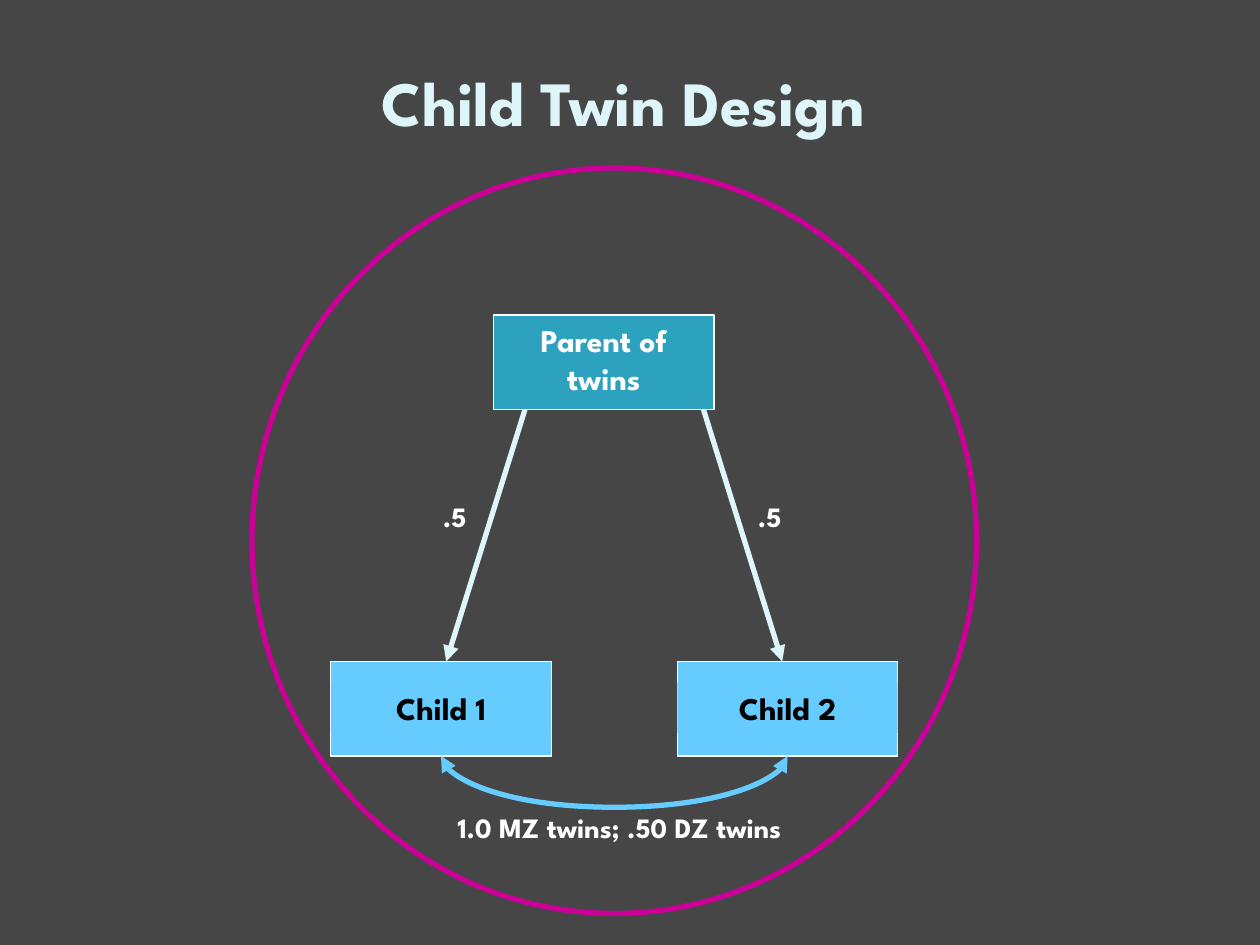
from pptx import Presentation
from pptx.dml.color import RGBColor
from pptx.enum.shapes import MSO_CONNECTOR as Link, MSO_SHAPE as Form
from pptx.enum.text import MSO_ANCHOR as Anchor, MSO_AUTO_SIZE as Fit, PP_ALIGN as Align
from pptx.oxml.ns import qn
from pptx.util import Emu, Inches, Pt
from lxml.etree import SubElement

CHARCOAL = RGBColor(0x46, 0x46, 0x46)
ICE = RGBColor(0xDE, 0xF5, 0xFA)
TEAL = RGBColor(0x2D, 0xA2, 0xBF)
SKY = RGBColor(0x66, 0xCC, 0xFF)
MAGENTA = RGBColor(0xCC, 0x00, 0x99)
WHITE = RGBColor(0xFF, 0xFF, 0xFF)
BLACK = RGBColor(0x00, 0x00, 0x00)


class Diagram:
    """Draws on one slide; lengths are cells of a 120 by 90 grid."""

    font_name = "League Spartan"
    thick, thin = Pt(3), Pt(0.75)

    def __init__(self, slide, background):
        self.slide = slide
        slide.background.fill.solid()
        slide.background.fill.fore_color.rgb = background

    @staticmethod
    def cells(*counts):
        return [Inches(count / 12) for count in counts]

    def outline(self, form, place, color, width, fill=None):
        shape = self.slide.shapes.add_shape(form, *self.cells(*place))
        shape.shadow.inherit = False
        if fill is None:
            shape.fill.background()
        else:
            shape.fill.solid()
            shape.fill.fore_color.rgb = fill
        shape.line.color.rgb = color
        shape.line.width = width
        return shape

    def box(self, place, fill):
        return self.outline(Form.RECTANGLE, place, WHITE, self.thin, fill)

    def text(self, words, place, size, color=WHITE, align=Align.CENTER,
             anchor=Anchor.TOP, fit=Fit.SHAPE_TO_FIT_TEXT, spacing=None, fill=None):
        label = self.slide.shapes.add_textbox(*self.cells(*place))
        if fill is not None:
            label.fill.solid()
            label.fill.fore_color.rgb = fill
        frame = label.text_frame
        frame.word_wrap = True
        frame.auto_size = fit
        frame.vertical_anchor = anchor
        paragraph = frame.paragraphs[0]
        paragraph.text = words
        paragraph.alignment = align
        paragraph.line_spacing = spacing
        font = paragraph.font
        font.name, font.size, font.bold = self.font_name, Pt(size), True
        font.color.rgb = color

    def arrow(self, start, end, color, ends=("tailEnd",), kind=Link.STRAIGHT):
        arrow = self.slide.shapes.add_connector(kind, *self.cells(*start, *end))
        arrow.line.color.rgb = color
        arrow.line.width = self.thick
        for end_tag in ends:
            SubElement(arrow.line._get_or_add_ln(), qn(f"a:{end_tag}"), type="triangle")
        SubElement(arrow._element.spPr, qn("a:effectLst"))
        return arrow

    def sagging_arrow(self, left_box, right_box, depth, color):
        """Double-headed curve that hangs below two boxes on the same row."""
        arrow = self.arrow((0, 0), (1, 1), color, ("headEnd", "tailEnd"), Link.CURVE)
        arrow.begin_connect(left_box, 2)
        arrow.end_connect(right_box, 2)
        start = left_box.left + left_box.width // 2
        span = right_box.left + right_box.width // 2 - start
        bottom = left_box.top + left_box.height
        # Turned a quarter, the curve needs a tiny width that its adjustment multiplies.
        sliver = Emu(1588)
        arrow.left = start + (span - sliver) // 2
        arrow.top = bottom - span // 2
        arrow.width, arrow.height = sliver, span
        properties = arrow._element.spPr
        frame = properties.find(qn("a:xfrm"))
        frame.set("rot", "16200000")
        frame.set("flipH", "1")
        frame.attrib.pop("flipV", None)
        guides = properties.find(qn("a:prstGeom")).find(qn("a:avLst"))
        sag = round(self.cells(depth)[0] / sliver * 100000)
        SubElement(guides, qn("a:gd"), name="adj1", fmla=f"val {sag}")


def main():
    deck = Presentation()
    deck.slide_width, deck.slide_height = Inches(10), Inches(7.5)
    diagram = Diagram(deck.slides.add_slide(deck.slide_layouts[6]), CHARCOAL)

    box_width, box_height = 21, 9
    parent_left, parent_top = 47, 30
    child_top, child_lefts = 63, (31.5, 64.5)
    parent_bottom = parent_top + box_height

    for parent_x, child_x in ((67, 74.5), (50, 42.5)):
        diagram.arrow((parent_x, parent_bottom), (child_x, child_top), ICE)
    diagram.text("Child Twin Design", (6, 5.5, 106.8, 8.25), 36, ICE,
                 anchor=Anchor.MIDDLE, fit=Fit.NONE)

    diagram.box((parent_left, parent_top, box_width, box_height), TEAL)
    diagram.text("Parent of twins", (parent_left, parent_top, box_width, 8.5), 18)

    children = [diagram.box((left, child_top, box_width, box_height), SKY)
                for left in child_lefts]
    for number, left in enumerate(child_lefts, 1):
        diagram.text(f"Child {number}", (left, child_top + 2, box_width, 4.8), 18,
                     BLACK, fill=SKY)

    diagram.sagging_arrow(*children, 5.4, SKY)
    diagram.text("1.0 MZ twins; .50 DZ twins", (33, 78, 52, 3.1), 16, spacing=0.5)
    for left in (41, 71):
        diagram.text(".5", (left, 47, 5, 4.4), 16, align=Align.LEFT)
    diagram.outline(Form.OVAL, (24, 16, 69, 71), MAGENTA, diagram.thick)

    deck.save("out.pptx")


if __name__ == "__main__":
    main()
